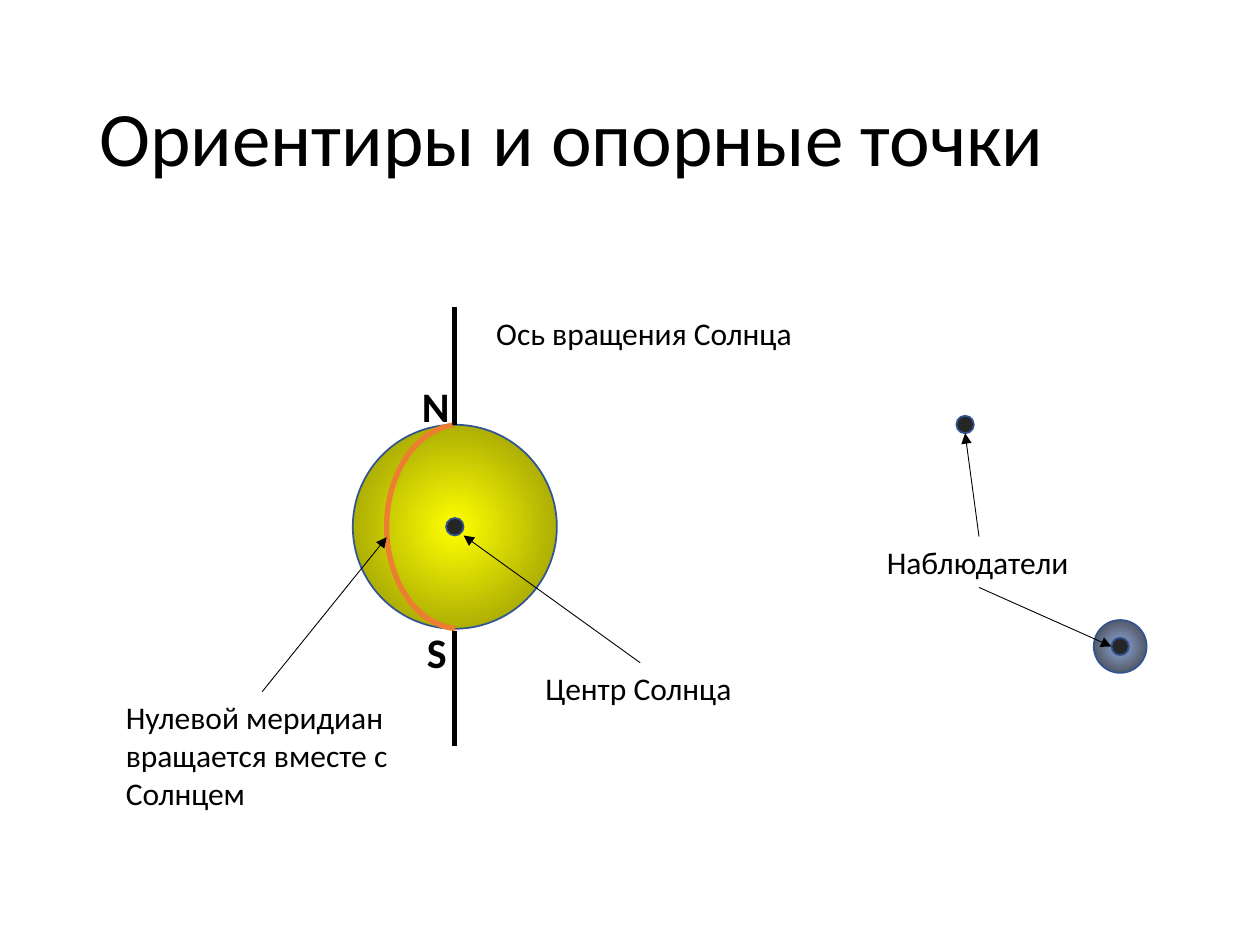
from dataclasses import dataclass

from pptx import Presentation
from pptx.dml.color import RGBColor
from pptx.enum import shapes, text
from pptx.oxml import parse_xml
from pptx.oxml.ns import nsdecls, qn
from pptx.util import Pt


@dataclass(frozen=True)
class Theme:
    font: str = "Calibri"
    ink: str = "000000"
    outline: str = "325491"
    dot: str = "262626"
    meridian: str = "ED7D31"
    sun: tuple = ("FFFF00", "8C8E06")
    planet: tuple = ("8FAADC", "3B3838")
    title: float = 44
    label: float = 18
    pole: float = 24
    thin: float = 0.5
    thick: float = 3
    dot_size: float = 10


T = Theme()


def rgb(value):
    return RGBColor.from_string(value)


def add_text(s, box, words, size, bold=False, wrap=False):
    tb = s.shapes.add_textbox(*map(Pt, box))
    tf = tb.text_frame
    tf.word_wrap = wrap
    tf.text = words
    for p in tf.paragraphs:
        for r in p.runs:
            r.font.name, r.font.size, r.font.bold = T.font, Pt(size), bold
            r.font.color.rgb = rgb(T.ink)
    return tf


def add_line(s, start, end, width, arrow=False):
    c = s.shapes.add_connector(shapes.MSO_CONNECTOR.STRAIGHT,
                               *map(Pt, (*start, *end)))
    c.line.width = Pt(width)
    c.line.color.rgb = rgb(T.ink)
    if arrow:
        c.line._get_or_add_ln().append(
            parse_xml(f'<a:tailEnd {nsdecls("a")} type="triangle"/>'))
    c._element.spPr.append(parse_xml(f'<a:effectLst {nsdecls("a")}/>'))


def add_circle(s, centre, size):
    cx, cy = centre
    sp = s.shapes.add_shape(shapes.MSO_SHAPE.OVAL, Pt(cx - size / 2),
                            Pt(cy - size / 2), Pt(size), Pt(size))
    sp.shadow.inherit = False
    sp.line.color.rgb = rgb(T.outline)
    sp.line.width = Pt(1)
    return sp


def add_dot(s, centre):
    sp = add_circle(s, centre, T.dot_size)
    sp.fill.solid()
    sp.fill.fore_color.rgb = rgb(T.dot)


def add_globe(s, centre, size, colours):
    """Circle shaded radially from its centre to its edge."""
    sp = add_circle(s, centre, size)
    sp.fill.gradient()
    for stop, position, colour in zip(sp.fill.gradient_stops, (0, 1), colours):
        stop.position = position
        stop.color.rgb = rgb(colour)
    grad = sp._element.spPr.find(qn("a:gradFill"))
    grad.replace(grad.find(qn("a:lin")), parse_xml(
        f'<a:path {nsdecls("a")} path="circle">'
        '<a:fillToRect l="50000" t="50000" r="50000" b="50000"/></a:path>'))


def add_meridian(s, box):
    """Left half of an ellipse, from pole to pole."""
    sp = s.shapes.add_shape(shapes.MSO_SHAPE.ARC, *map(Pt, box))
    sp.adjustments[0], sp.adjustments[1] = 55.544, 159.567
    sp.shadow.inherit = False
    sp.fill.background()
    sp.line.color.rgb = rgb(T.meridian)
    sp.line.width = Pt(T.thick)


def draw_title(s, box):
    tf = add_text(s, box, "Ориентиры и опорные точки", T.title, wrap=True)
    tf.vertical_anchor = text.MSO_ANCHOR.MIDDLE
    tf.paragraphs[0].line_spacing = 0.9


def draw_sun(s, box):
    x, y, w, h = box
    size = 116.6
    cx, cy = x + 195.1, y + h / 2
    north, south = cy - size / 2, cy + size / 2

    add_globe(s, (cx, cy), size, T.sun)
    add_line(s, (cx, north), (cx, y), T.thick)
    add_line(s, (cx, y + h), (cx, south + 1.4), T.thick)
    add_dot(s, (cx, cy))
    add_meridian(s, (x + 156.2, north, 83.5, size))

    add_text(s, (x + 211.7, y, 185, 29), "Ось вращения Солнца", T.label)
    add_text(s, (x + 239.8, y + 203, 122.4, 29), "Центр Солнца", T.label)
    add_text(s, (x, y + 219.6, 170, 72.7),
             "Нулевой меридиан\nвращается вместе с\nСолнцем", T.label)
    add_text(s, (x + 169.2, north - 28.8, 30.2, 36), "N", T.pole, bold=True)
    add_text(s, (x + 172.1, south - 5, 26, 36), "S", T.pole, bold=True)

    add_line(s, (x + 301, y + 203), (cx + 5, cy + 5), T.thin, arrow=True)
    add_line(s, (x + 85, y + 219.6), (x + 156.2, cy + 6), T.thin, arrow=True)


def draw_observers(s, box):
    x, y, w, h = box
    distant = (x + 51.8, y + 5)
    on_planet = (x + w - 15.1, y + h - 15.1)
    label_w, label_h, label_y = 119.5, 29, y + 69.1
    middle = x + label_w / 2

    add_globe(s, on_planet, 30.2, T.planet)
    add_dot(s, on_planet)
    add_dot(s, distant)
    add_text(s, (x, label_y, label_w, label_h), "Наблюдатели", T.label)
    add_line(s, (middle, label_y + label_h),
             (on_planet[0] - T.dot_size / 2, on_planet[1]), T.thin, arrow=True)
    add_line(s, (middle, label_y),
             (distant[0], distant[1] + T.dot_size / 2), T.thin, arrow=True)


def main():
    prs = Presentation()
    prs.slide_width, prs.slide_height = Pt(720), Pt(540)
    s = prs.slides.add_slide(prs.slide_layouts[6])
    draw_title(s, (49.7, 28.8, 620.6, 104.4))
    draw_sun(s, (64.8, 175.7, 397, 250.6))
    draw_observers(s, (499.7, 237.6, 155.5, 146.9))
    prs.save("out.pptx")


if __name__ == "__main__":
    main()
